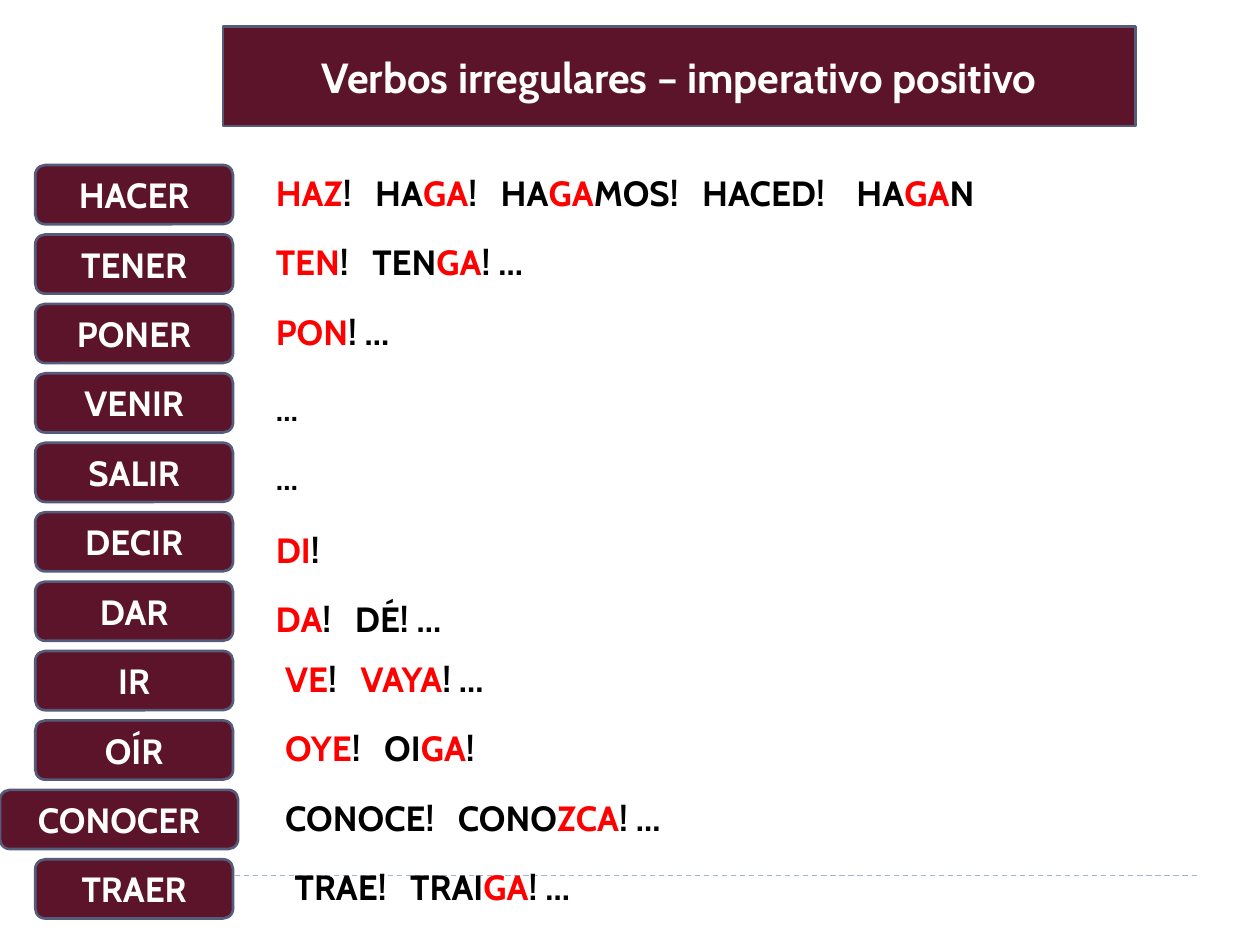
from dataclasses import dataclass

from lxml import etree
from pptx import Presentation
from pptx.dml.color import RGBColor
from pptx.enum.dml import MSO_LINE
from pptx.enum.shapes import MSO_CONNECTOR, MSO_SHAPE
from pptx.enum.text import MSO_ANCHOR, MSO_AUTO_SIZE, PP_ALIGN
from pptx.oxml import parse_xml
from pptx.oxml.ns import nsdecls, qn
from pptx.util import Inches, Pt

ROUND_RECT = MSO_SHAPE.ROUNDED_RECTANGLE
STRAIGHT = MSO_CONNECTOR.STRAIGHT
DASH = MSO_LINE.DASH
MIDDLE = MSO_ANCHOR.MIDDLE
CENTER, LEFT = PP_ALIGN.CENTER, PP_ALIGN.LEFT
NO_FIT, GROW = MSO_AUTO_SIZE.NONE, MSO_AUTO_SIZE.SHAPE_TO_FIT_TEXT

FONT = "Cabin"
WINE, BORDER, RULE = "5C142A", "545C79", "9FB8CD"
WHITE, BLACK, RED = "FFFFFF", "000000", "FF0000"

FIRST_ROW, ROW_PITCH = 1.31, 0.551
LABEL_LEFT, LABEL_WIDTH, LABEL_HEIGHT = 0.28, 1.57, 0.47
FORMS_LEFT, INDENT, DROP = 2.09, 0.075, 0.08


@dataclass
class Verb:
    """One row; in forms, every second part between bars is red."""
    name: str
    forms: str
    width: float
    indent: int = 0
    drop: float = 0
    size: int = 20
    height: float = 0.44
    label_left: float = LABEL_LEFT
    label_width: float = LABEL_WIDTH


VERBS = [
    Verb("HACER", "|HAZ|!   HA|GA|!   HA|GA|MOS!   HACED!    HA|GA|N", 6.78),
    Verb("TENER", "|TEN|!   TEN|GA|! …", 2.58),
    Verb("PONER", "|PON|! …", 1.38),
    Verb("VENIR", "…", 0.45, drop=DROP, size=18, height=0.4),
    Verb("SALIR", "…", 0.45, drop=DROP, size=18, height=0.4),
    Verb("DECIR", "|DI|!", 0.59, drop=DROP),
    Verb("DAR", "|DA|!   DÉ! …", 1.77, drop=DROP),
    Verb("IR", "|VE|!   |VAYA|! …", 2.03, indent=1),
    Verb("OÍR", "|OYE|!   OI|GA|!", 1.97, indent=1),
    Verb("CONOCER", "CONOCE!   CONO|ZCA|! …", 3.85, indent=1,
         label_left=0, label_width=1.89),
    Verb("TRAER", "TRAE!   TRAI|GA|! …", 2.84, indent=2),
]


def rgb(color: str) -> RGBColor:
    return RGBColor.from_string(color)


def format_run(r, size: int, color: str) -> None:
    r.font.name, r.font.size, r.font.bold = FONT, Pt(size), True
    r.font.color.rgb = rgb(color)


def style_box(sp, text: str, size: int) -> None:
    """Give a label or the title its wine fill, border and centred text."""
    sp.fill.solid()
    sp.fill.fore_color.rgb = rgb(WINE)
    sp.line.color.rgb = rgb(BORDER)
    sp.line.width = Pt(1.5)
    tf = sp.text_frame
    tf.text = text
    tf.auto_size = NO_FIT
    tf.vertical_anchor = MIDDLE
    p = tf.paragraphs[0]
    p.alignment = CENTER
    format_run(p.runs[0], size, WHITE)


def add_title(s, text: str) -> None:
    sp = s.shapes.title
    sp.left, sp.top, sp.width, sp.height = map(Inches, (1.77, 0.21, 7.24, 0.79))
    outline = parse_xml(
        f'<a:prstGeom {nsdecls("a")} prst="roundRect"><a:avLst/></a:prstGeom>')
    sp.element.spPr.find(qn("a:xfrm")).addnext(outline)
    style_box(sp, text, 24)


def add_rule(s, y: float) -> None:
    line = s.shapes.add_connector(STRAIGHT, *map(Inches, (0.5, y, 9.5, y)))
    line.line.color.rgb = rgb(RULE)
    line.line.width = Pt(0.75)
    line.line.dash_style = DASH
    etree.SubElement(line.element.spPr, qn("a:effectLst"))


def add_label(s, verb: Verb, top: float) -> None:
    sp = s.shapes.add_shape(ROUND_RECT, Inches(verb.label_left), Inches(top),
                            Inches(verb.label_width), Inches(LABEL_HEIGHT))
    sp.shadow.inherit = False
    style_box(sp, verb.name, 20)


def add_forms(s, verb: Verb, top: float) -> None:
    left = FORMS_LEFT + verb.indent * INDENT
    sp = s.shapes.add_textbox(Inches(left), Inches(top + verb.drop),
                              Inches(verb.width), Inches(verb.height))
    tf = sp.text_frame
    tf.word_wrap = False
    tf.auto_size = GROW
    p = tf.paragraphs[0]
    p.alignment = LEFT
    for i, part in enumerate(verb.forms.split("|")):
        if part:
            r = p.add_run()
            r.text = part
            format_run(r, verb.size, RED if i % 2 else BLACK)


def main() -> None:
    prs = Presentation()
    prs.slide_width, prs.slide_height = Inches(10), Inches(7.5)
    s = prs.slides.add_slide(prs.slide_layouts.get_by_name("Title Only"))
    add_rule(s, 6.95)
    add_title(s, "Verbos irregulares – imperativo positivo")
    for row, verb in enumerate(VERBS):
        top = FIRST_ROW + row * ROW_PITCH
        add_label(s, verb, top)
        add_forms(s, verb, top)
    prs.save("out.pptx")


if __name__ == "__main__":
    main()
